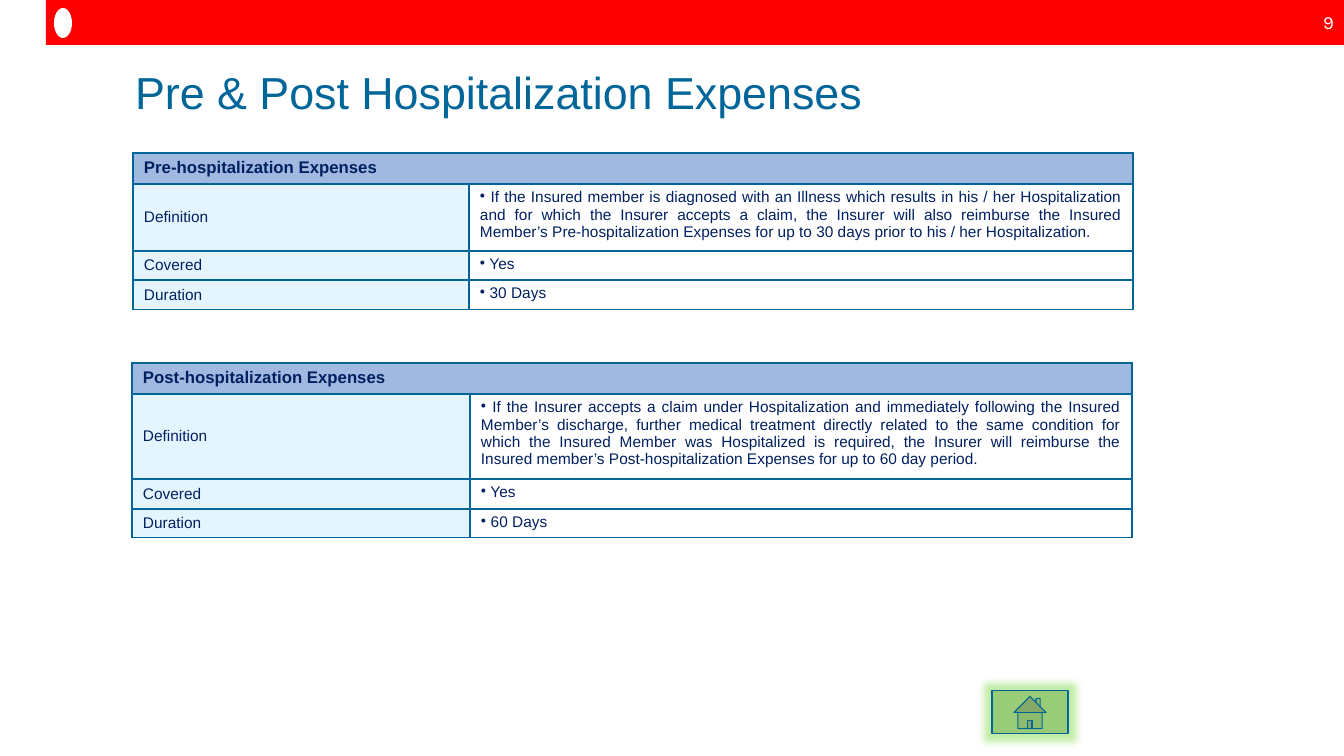
from dataclasses import dataclass

from lxml.etree import SubElement
from pptx import Presentation
from pptx.dml.color import RGBColor
from pptx.enum.shapes import MSO_SHAPE
from pptx.enum.text import MSO_ANCHOR, MSO_AUTO_SIZE, PP_ALIGN
from pptx.oxml.ns import qn
from pptx.util import Emu, Pt

# Content
TITLE = "Pre & Post Hospitalization Expenses"
PAGE_NUMBER = "9"
BENEFITS = [
    {
        "box": (133, 153), "columns": (336, 664), "rows": (31, 67, 29, 30),
        "heading": "Pre-hospitalization Expenses",
        "details": [
            ("Definition", "If the Insured member is diagnosed with an Illness which results in "
             "his / her Hospitalization and for which the Insurer accepts a claim, the Insurer "
             "will also reimburse the Insured Member’s Pre-hospitalization Expenses for up to "
             "30 days prior to his / her Hospitalization."),
            ("Covered", "Yes"),
            ("Duration", "30 Days"),
        ],
    },
    {
        "box": (132, 363), "columns": (338, 662), "rows": (31, 85, 30, 29),
        "heading": "Post-hospitalization Expenses",
        "details": [
            ("Definition", "If the Insurer accepts a claim under Hospitalization and immediately "
             "following the Insured Member’s discharge, further medical treatment directly "
             "related to the same condition for which the Insured Member was Hospitalized is "
             "required, the Insurer will reimburse the Insured member’s Post-hospitalization "
             "Expenses for up to 60 day period."),
            ("Covered", "Yes"),
            ("Duration", "60 Days"),
        ],
    },
]


@dataclass(frozen=True)
class Theme:
    banner: str = "FF0000"
    white: str = "FFFFFF"
    teal: str = "006699"
    navy: str = "002060"
    heading_fill: str = "4472C4"
    label_fill: str = "CCECFF"
    home_fill: str = "70AD47"
    home_glow: str = "69D321"
    font: str = "Arial"
    number_font: str = "Karla"
    title_size: float = 32
    number_size: float = 13.3
    heading_size: float = 12
    detail_size: float = 11


THEME = Theme()
HALF = 50000
PX_PER_INCH = 100.8


def px(length):
    return Emu(round(length * 914400 / PX_PER_INCH))


def box(*lengths):
    return [px(length) for length in lengths]


def set_fill(fill, color, alpha=None):
    fill.solid()
    fill.fore_color.rgb = RGBColor.from_string(color)
    if alpha:
        for rgb in fill._xPr.find(qn("a:solidFill")):
            SubElement(rgb, qn("a:alpha"), val=str(alpha))


def add_run(paragraph, text, size, color, font=THEME.font, bold=False):
    run = paragraph.add_run()
    run.text = text
    run.font.size = Pt(size)
    run.font.name = font
    run.font.bold = bold
    run.font.color.rgb = RGBColor.from_string(color)


def add_block(slide, preset, place, color, alpha=None):
    block = slide.shapes.add_shape(preset, *box(*place))
    block.shadow.inherit = False
    set_fill(block.fill, color, alpha)
    block.line.fill.background()
    return block


def add_borders(cell):
    properties = cell._tc.get_or_add_tcPr()
    for position, side in enumerate(("lnL", "lnR", "lnT", "lnB")):
        border = SubElement(properties, qn(f"a:{side}"), w=str(Pt(1)))
        solid = SubElement(border, qn("a:solidFill"))
        SubElement(solid, qn("a:srgbClr"), val=THEME.teal)
        properties.insert(position, border)


def format_cell(cell, color=None, anchor=MSO_ANCHOR.TOP):
    cell.margin_left = cell.margin_right = px(11)
    cell.margin_top = cell.margin_bottom = px(5)
    cell.vertical_anchor = anchor
    if color:
        set_fill(cell.fill, color, HALF)
    else:
        cell.fill.background()
    add_borders(cell)
    return cell.text_frame.paragraphs[0]


def add_benefit(slide, benefit):
    columns, rows = benefit["columns"], benefit["rows"]
    table = slide.shapes.add_table(
        len(rows), len(columns), *box(*benefit["box"], sum(columns), sum(rows))).table
    table.first_row = table.horz_banding = False
    for column, width in zip(table.columns, columns):
        column.width = px(width)
    for row, height in zip(table.rows, rows):
        row.height = px(height)

    # Heading across both columns
    table.cell(0, 0).merge(table.cell(0, 1))
    format_cell(table.cell(0, 1), THEME.heading_fill)
    heading = format_cell(table.cell(0, 0), THEME.heading_fill)
    add_run(heading, benefit["heading"], THEME.heading_size, THEME.navy, bold=True)

    # Label and bulleted detail
    for row, (label, detail) in enumerate(benefit["details"], start=1):
        name = format_cell(table.cell(row, 0), THEME.label_fill, MSO_ANCHOR.MIDDLE)
        add_run(name, label, THEME.detail_size, THEME.navy)
        entry = format_cell(table.cell(row, 1))
        SubElement(entry._p.get_or_add_pPr(), qn("a:buChar"), char="•")
        if label == "Definition":
            entry.alignment = PP_ALIGN.JUSTIFY
        add_run(entry, f" {detail}", THEME.detail_size, THEME.navy)


def add_title(slide):
    title = slide.shapes.title
    title.left, title.top, title.width, title.height = box(125, 55, 756, 56)
    frame = title.text_frame
    frame.word_wrap = True
    frame.auto_size = MSO_AUTO_SIZE.NONE
    frame.vertical_anchor = MSO_ANCHOR.TOP
    frame.margin_left = frame.margin_right = frame.margin_top = px(10)
    frame.margin_bottom = 0
    heading = frame.paragraphs[0]
    heading.alignment = PP_ALIGN.LEFT
    heading.line_spacing = 1.0
    heading.space_before = 0
    add_run(heading, TITLE, THEME.title_size, THEME.teal)


def add_page_number(slide):
    frame = slide.shapes.add_textbox(*box(1294, 6, 50, 33)).text_frame
    frame.word_wrap = True
    frame.vertical_anchor = MSO_ANCHOR.MIDDLE
    number = frame.paragraphs[0]
    number.alignment = PP_ALIGN.RIGHT
    add_run(number, PAGE_NUMBER, THEME.number_size, THEME.white, THEME.number_font)


def add_home_button(slide):
    home = add_block(slide, MSO_SHAPE.ACTION_BUTTON_HOME, (992, 691, 76, 43),
                     THEME.home_fill, HALF)
    home.line.color.rgb = RGBColor.from_string(THEME.teal)
    home.line.width = Pt(0.75)
    effects = home._element.spPr.find(qn("a:effectLst"))
    glow = SubElement(effects, qn("a:glow"), rad=str(Pt(11)))
    color = SubElement(glow, qn("a:srgbClr"), val=THEME.home_glow)
    SubElement(color, qn("a:alpha"), val="40000")


def main():
    deck = Presentation()
    deck.slide_width, deck.slide_height = box(1344, 756)
    slide = deck.slides.add_slide(deck.slide_layouts[5])

    # Banner with a plain emblem
    add_block(slide, MSO_SHAPE.RECTANGLE, (46, 0, 1298, 45), THEME.banner)
    add_block(slide, MSO_SHAPE.OVAL, (54, 8, 18, 30), THEME.white)
    add_page_number(slide)

    # Title, tables and navigation
    add_title(slide)
    for benefit in BENEFITS:
        add_benefit(slide, benefit)
    add_home_button(slide)
    deck.save("out.pptx")


if __name__ == "__main__":
    main()
